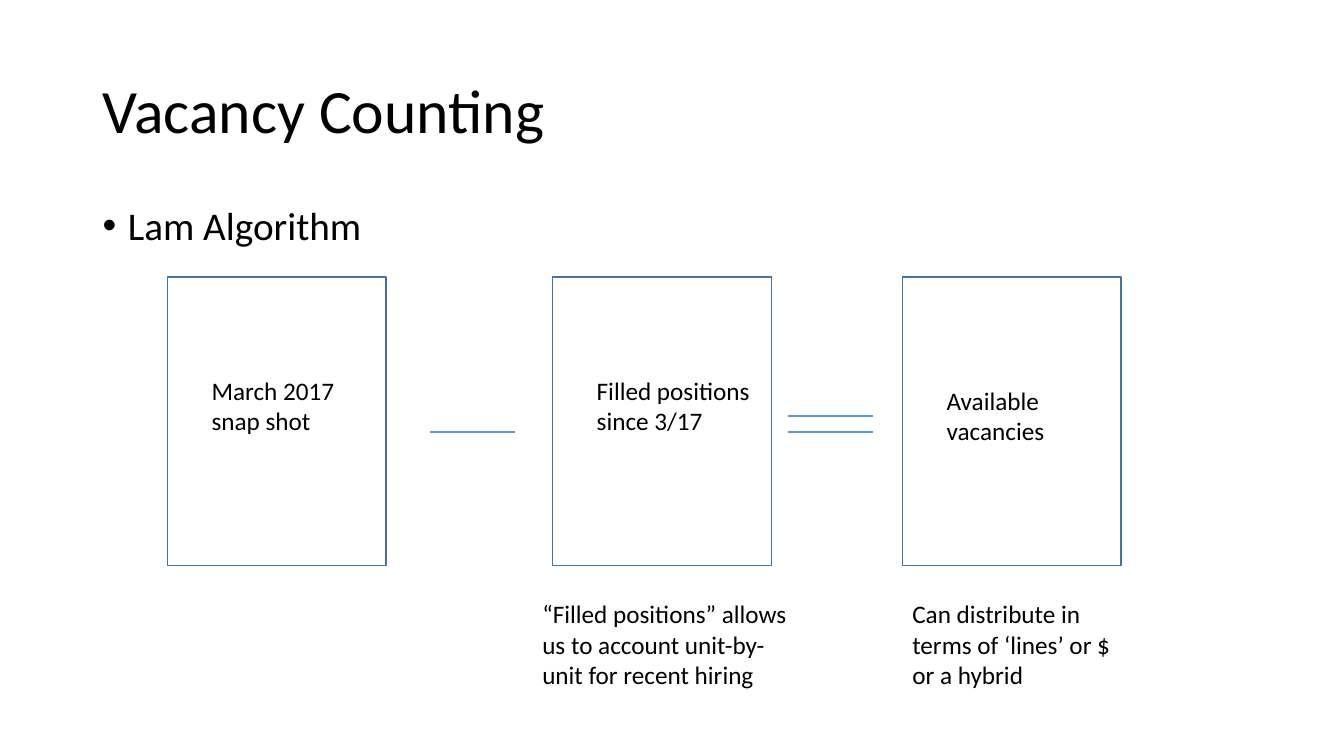
from dataclasses import dataclass

from lxml.etree import SubElement
from pptx import Presentation
from pptx.dml.color import RGBColor
from pptx.enum.shapes import MSO_CONNECTOR, MSO_SHAPE
from pptx.enum.text import MSO_ANCHOR, MSO_AUTO_SIZE, PP_ALIGN
from pptx.oxml.ns import qn
from pptx.util import Pt

EMU_PER_PX = 9144


@dataclass(frozen=True)
class Theme:
    """Colours, font and type sizes of the slide."""
    font: str = "Calibri"
    text: RGBColor = RGBColor(0x00, 0x00, 0x00)
    background: RGBColor = RGBColor(0xFF, 0xFF, 0xFF)
    outline: RGBColor = RGBColor(0x43, 0x73, 0x9E)
    operator: RGBColor = RGBColor(0x5B, 0x9B, 0xD5)
    title_size: int = 44
    bullet_size: int = 28
    label_size: int = 18


THEME = Theme()


def px(*lengths):
    """Turn pixel lengths into EMU."""
    return [length * EMU_PER_PX for length in lengths]


def write_text(shape, text, size=THEME.label_size, anchor=MSO_ANCHOR.TOP,
               line_spacing=None, space_before=0):
    """Write one left-aligned paragraph into a shape and return it."""
    frame = shape.text_frame
    frame.word_wrap = True
    frame.auto_size = MSO_AUTO_SIZE.NONE
    frame.vertical_anchor = anchor
    paragraph = frame.paragraphs[0]
    paragraph.alignment = PP_ALIGN.LEFT
    paragraph.space_before = Pt(space_before)
    if line_spacing:
        paragraph.line_spacing = line_spacing
    run = paragraph.add_run()
    run.text = text
    run.font.name = THEME.font
    run.font.size = Pt(size)
    run.font.color.rgb = THEME.text
    return paragraph


def add_text(slide, text, left, top, width, height, **text_format):
    """Add a wrapped text box and return its paragraph."""
    text_box = slide.shapes.add_textbox(*px(left, top, width, height))
    return write_text(text_box, text, **text_format)


def add_title(slide, text, left, top, width, height):
    """Place and format the title placeholder."""
    title = slide.shapes.title
    title.left, title.top, title.width, title.height = px(left, top, width, height)
    write_text(title, text, size=THEME.title_size, anchor=MSO_ANCHOR.MIDDLE,
               line_spacing=0.9)


def add_bullet(slide, text, left, top, width, height):
    """Add a bulleted line with a hanging indent."""
    paragraph = add_text(slide, text, left, top, width, height,
                         size=THEME.bullet_size, line_spacing=0.9, space_before=10)
    properties = paragraph._p.get_or_add_pPr()
    indent, = px(25)
    properties.set("marL", str(indent))
    properties.set("indent", str(-indent))
    SubElement(properties, qn("a:buFont")).set("typeface", "Arial")
    SubElement(properties, qn("a:buChar")).set("char", "•")


def add_card(slide, label, left, top, width, height, label_drop):
    """Add an outlined card with its label inside."""
    card = slide.shapes.add_shape(MSO_SHAPE.RECTANGLE, *px(left, top, width, height))
    card.shadow.inherit = False
    card.fill.background()
    card.line.color.rgb = THEME.outline
    card.line.width = Pt(1)
    add_text(slide, label, left + 34, top + label_drop, 190, 71)


def add_operator(slide, left, bottom, width, stroke_count):
    """Stack strokes upward from the bottom: one for minus, two for equals."""
    for stroke in range(stroke_count):
        level = bottom - 16 * stroke
        line = slide.shapes.add_connector(
            MSO_CONNECTOR.STRAIGHT, *px(left, level, left + width, level))
        line.line.color.rgb = THEME.operator
        line.line.width = Pt(1.5)
        SubElement(line._element.spPr, qn("a:effectLst"))


def add_equation(slide, left, top, width, height):
    """Lay out the three cards, the operators and the notes below."""
    cards = [("March 2017 snap shot", 0, 92),
             ("Filled positions since 3/17", 382, 92),
             ("Available vacancies", 729, 102)]
    card_width = width - cards[-1][1]
    for label, offset, label_drop in cards:
        add_card(slide, label, left + offset, top, card_width, height, label_drop)

    for offset, stroke_count in [(261, 1), (616, 2)]:
        add_operator(slide, left + offset, top + 154, 84, stroke_count)

    notes = [
        ("“Filled positions” allows us to account unit-by-unit for recent hiring", 362, 278),
        ("Can distribute in terms of ‘lines’ or $ or a hybrid", 729, 225),
    ]
    for text, offset, note_width in notes:
        add_text(slide, text, left + offset, top + height + 28, note_width, 101)


def main():
    """Build and save the vacancy counting slide."""
    presentation = Presentation()
    presentation.slide_width, presentation.slide_height = px(1333, 750)
    slide = presentation.slides.add_slide(presentation.slide_layouts.get_by_name("Title Only"))
    slide.background.fill.solid()
    slide.background.fill.fore_color.rgb = THEME.background
    add_title(slide, "Vacancy Counting", 92, 40, 1150, 145)
    add_bullet(slide, "Lam Algorithm", 92, 200, 1150, 476)
    add_equation(slide, 166, 275, 946, 286)
    presentation.save("out.pptx")


if __name__ == "__main__":
    main()
